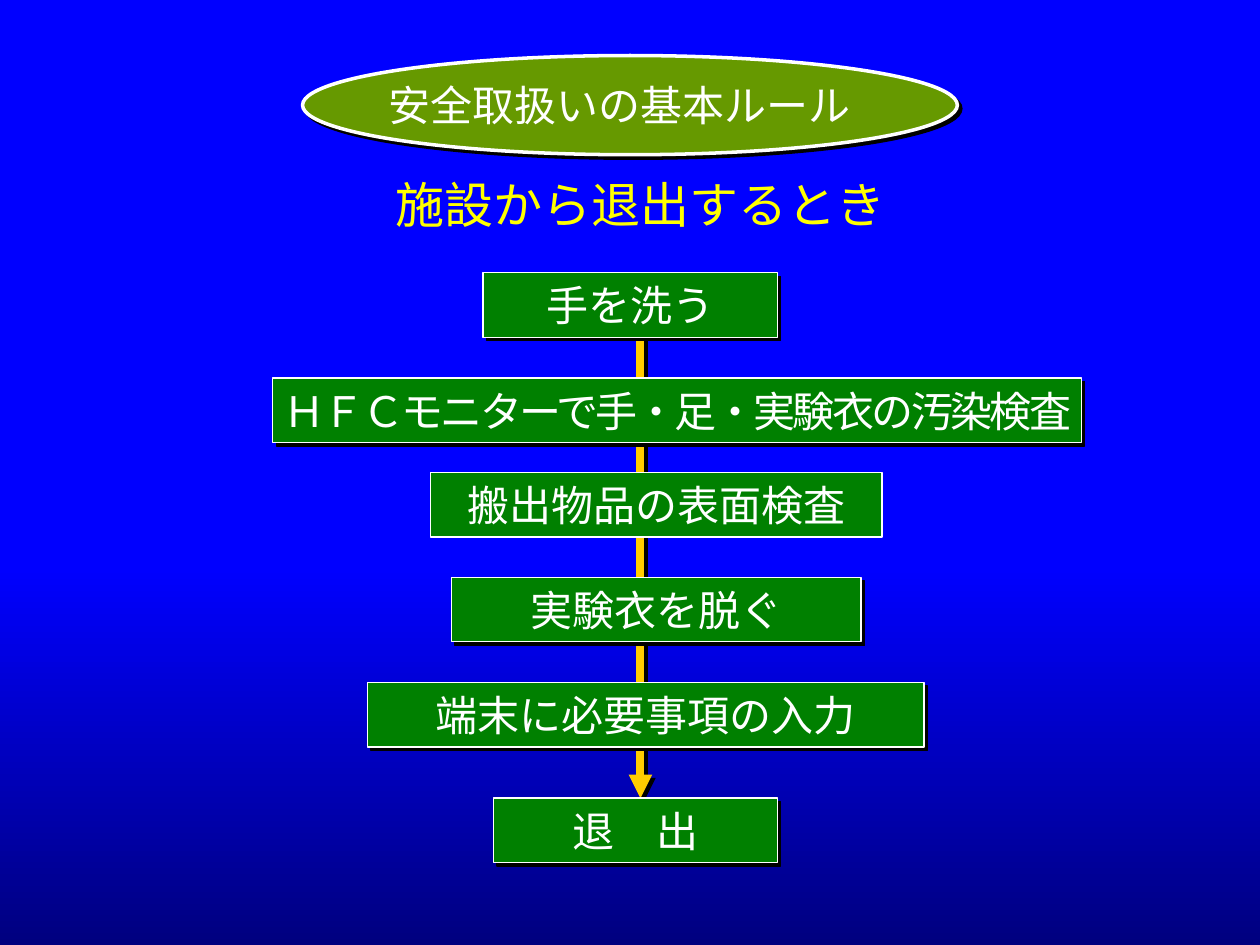
from lxml import etree
from pptx import Presentation
from pptx.dml.color import RGBColor
from pptx.enum.shapes import MSO_CONNECTOR, MSO_SHAPE
from pptx.enum.text import MSO_ANCHOR, PP_ALIGN
from pptx.oxml import parse_xml
from pptx.oxml.ns import nsdecls, qn
from pptx.util import Cm, Pt

NAVY = RGBColor(0x00, 0x00, 0x7F)
BLUE = RGBColor(0x00, 0x00, 0xFF)
WHITE = RGBColor(0xFF, 0xFF, 0xFF)
YELLOW = RGBColor(0xFF, 0xFF, 0x00)
AMBER = RGBColor(0xFF, 0xCC, 0x00)
OLIVE = RGBColor(0x66, 0x99, 0x00)
GREEN = RGBColor(0x00, 0x80, 0x00)
FONT = "Times New Roman"

TITLE = "安全取扱いの基本ルール"
SUBTITLE = "施設から退出するとき"
# text, left, top, width (cm), shadow, letter spacing (pt)
STEPS = [
    ("手を洗う", 9.74, 5.5, 5.93, True, 0),
    ("ＨＦＣモニターで手・足・実験衣の汚染検査", 5.5, 7.62, 16.3, True, -1.5),
    ("搬出物品の表面検査", 8.68, 9.53, 9.1, False, 0),
    ("実験衣を脱ぐ", 9.1, 11.64, 8.26, True, 0),
    ("端末に必要事項の入力", 7.41, 13.76, 11.22, True, 0),
    ("退　出", 9.95, 16.09, 5.72, True, 0),
]
STEP_H = 1.3
ARROW_X, ARROW_TOP = 12.91, 6.77


def add_shadow(s):
    """Hard black shadow towards the lower right."""
    sp_pr = s._element.spPr
    for old in sp_pr.findall(qn("a:effectLst")):
        sp_pr.remove(old)
    sp_pr.append(parse_xml(
        f'<a:effectLst {nsdecls("a")}><a:outerShdw dist="35921" dir="2700000" '
        'algn="ctr" rotWithShape="0"><a:srgbClr val="000000"/></a:outerShdw>'
        '</a:effectLst>'))


def write(s, text, size, color, wrap=True, spacing=0):
    tf = s.text_frame
    tf.word_wrap = wrap
    tf.vertical_anchor = MSO_ANCHOR.MIDDLE
    p = tf.paragraphs[0]
    p.alignment = PP_ALIGN.CENTER
    r = p.add_run()
    r.text = text
    p.font.size, p.font.name = Pt(size), FONT
    p.font.color.rgb = color
    if spacing:
        r._r.get_or_add_rPr().set("spc", str(int(spacing * 100)))


def add_box(slide, kind, box, fill, line_width, shadow):
    s = slide.shapes.add_shape(kind, *map(Cm, box))
    s.fill.solid()
    s.fill.fore_color.rgb = fill
    s.line.color.rgb = WHITE
    s.line.width = Pt(line_width)
    s.shadow.inherit = False
    if shadow:
        add_shadow(s)
    return s


prs = Presentation()
prs.slide_width, prs.slide_height = Cm(25.4), Cm(19.05)
slide = prs.slides.add_slide(prs.slide_layouts[6])

# Background: navy at the bottom, rising to blue
bg = slide.background.fill
bg.gradient()
bg.gradient_angle = 90
for stop, (position, color) in zip(bg.gradient_stops, [(0, NAVY), (0.4, BLUE)]):
    stop.position = position
    stop.color.rgb = color

# Flow arrow behind the steps, ending at the last one
arrow = slide.shapes.add_connector(
    MSO_CONNECTOR.STRAIGHT, Cm(ARROW_X), Cm(ARROW_TOP), Cm(ARROW_X), Cm(STEPS[-1][2]))
arrow.line.color.rgb = AMBER
arrow.line.width = Pt(4.5)
etree.SubElement(arrow.line._get_or_add_ln(), qn("a:tailEnd"), type="triangle")
add_shadow(arrow)

# Title ellipse and headings
add_box(slide, MSO_SHAPE.OVAL, (6.1, 1.12, 13.2, 2), OLIVE, 2, True)
for text, box, size, color in [
    (TITLE, (5.08, 1.48, 14.8, 1.27), 24, WHITE),
    (SUBTITLE, (4.24, 3.39, 17.35, 1.45), 28, YELLOW),
]:
    write(slide.shapes.add_textbox(*map(Cm, box)), text, size, color)

# Steps
for text, left, top, width, shadow, spacing in STEPS:
    s = add_box(slide, MSO_SHAPE.RECTANGLE, (left, top, width, STEP_H),
                GREEN, 0.75, shadow)
    write(s, text, 24, WHITE, wrap=False, spacing=spacing)

prs.save("out.pptx")
